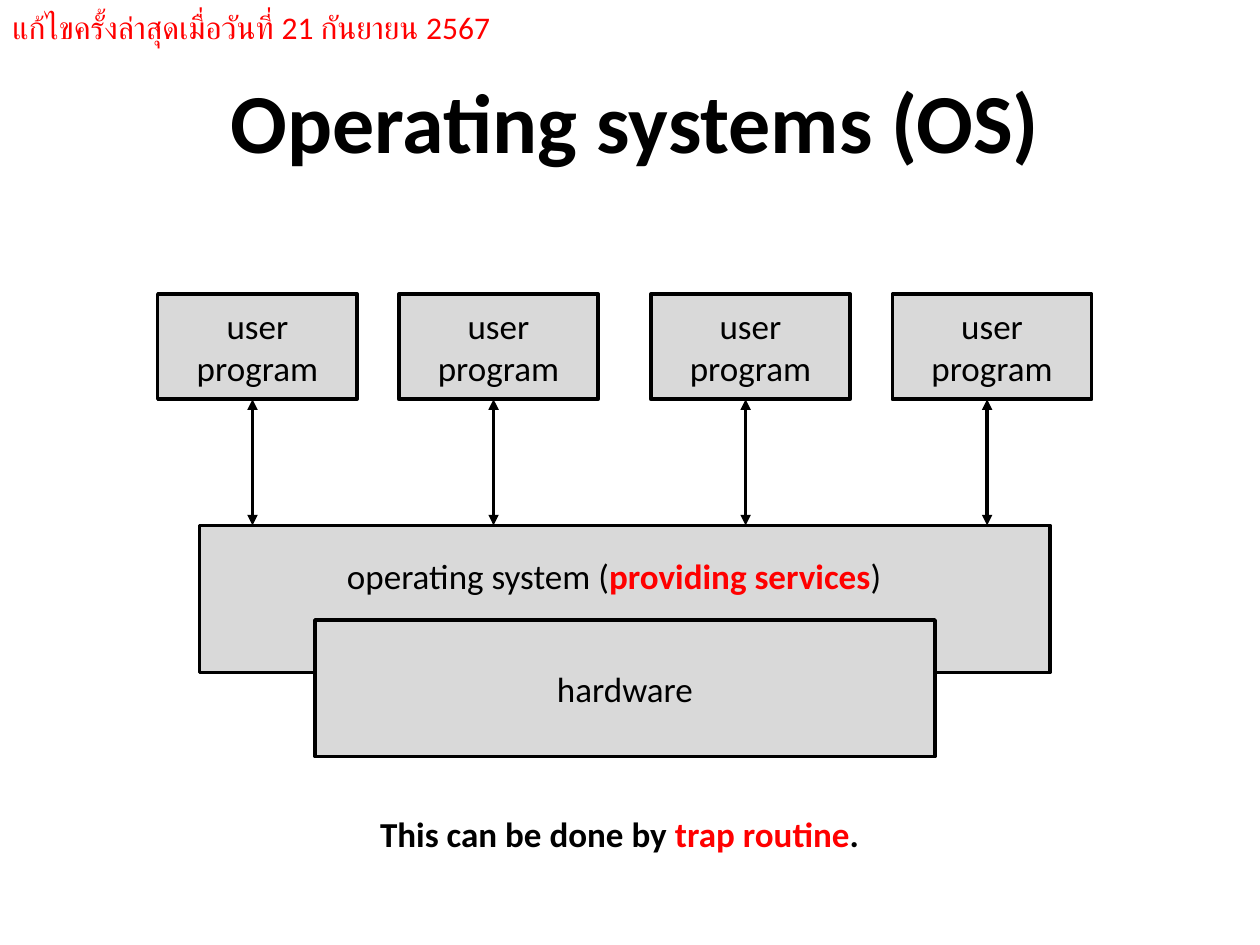
from dataclasses import dataclass

from lxml import etree
from pptx import Presentation
from pptx import util as u
from pptx.dml.color import RGBColor
from pptx.enum import shapes, text
from pptx.oxml import ns


@dataclass(frozen=True)
class Theme:
    """Colours, font and type sizes of the slide."""

    font: str = "Calibri"
    ink: RGBColor = RGBColor(0, 0, 0)
    accent: RGBColor = RGBColor(255, 0, 0)
    panel: RGBColor = RGBColor(217, 217, 217)
    title: int = 48
    body: int = 20
    note: int = 18
    line: int = 2


class Page:
    """Draws styled elements on one slide."""

    def __init__(self, deck, theme):
        self.theme = theme
        self.slide = deck.slides.add_slide(deck.slide_layouts[5])

    def style(self, span, size, color, bold=False):
        span.font.name = self.theme.font
        span.font.size = u.Pt(size)
        span.font.color.rgb = color
        span.font.bold = bold

    def title(self, words, left, top, width, height):
        box = self.slide.shapes.title
        box.left, box.top, box.width, box.height = map(u.Cm, (left, top, width, height))
        frame = box.text_frame
        frame.text = words
        frame.auto_size = text.MSO_AUTO_SIZE.NONE
        frame.vertical_anchor = text.MSO_ANCHOR.TOP
        para = frame.paragraphs[0]
        para.alignment = text.PP_ALIGN.CENTER
        self.style(para.runs[0], self.theme.title, self.theme.ink, True)

    def label(self, parts, left, top, width, height, size, align=text.PP_ALIGN.CENTER):
        box = self.slide.shapes.add_textbox(*map(u.Cm, (left, top, width, height)))
        box.text_frame.word_wrap = True
        para = box.text_frame.paragraphs[0]
        para.alignment = align
        for words, color, bold in parts:
            span = para.add_run()
            span.text = words
            self.style(span, size, color, bold)

    def panel(self, words, left, top, width, height):
        box = self.slide.shapes.add_shape(
            shapes.MSO_SHAPE.RECTANGLE, *map(u.Cm, (left, top, width, height))
        )
        box.shadow.inherit = False
        box.fill.solid()
        box.fill.fore_color.rgb = self.theme.panel
        box.line.color.rgb = self.theme.ink
        box.line.width = u.Pt(self.theme.line)
        box.text_frame.vertical_anchor = text.MSO_ANCHOR.MIDDLE
        para = box.text_frame.paragraphs[0]
        para.text = words
        para.alignment = text.PP_ALIGN.CENTER
        for span in para.runs:
            self.style(span, self.theme.body, self.theme.ink)

    def double_arrow(self, x, top, bottom):
        arrow = self.slide.shapes.add_connector(
            shapes.MSO_CONNECTOR.STRAIGHT, *map(u.Cm, (x, top, x, bottom))
        )
        arrow.line.color.rgb = self.theme.ink
        arrow.line.width = u.Pt(self.theme.line)
        outline = arrow.line._get_or_add_ln()
        for end in ("a:headEnd", "a:tailEnd"):
            etree.SubElement(outline, ns.qn(end), type="triangle")
        etree.SubElement(arrow._element.spPr, ns.qn("a:effectLst"))


def main():
    """Build and save the operating system slide."""
    theme = Theme()
    deck = Presentation()
    deck.slide_width, deck.slide_height = u.Cm(25.4), u.Cm(19.05)
    page = Page(deck, theme)
    page.title("Operating systems (OS)", 1.48, 1.27, 22.65, 2.31)

    program_top, program_height, system_top = 5.93, 2.12, 10.59
    program_bottom = program_top + program_height
    for left in (3.18, 8.04, 13.12, 17.99):
        page.panel("user\vprogram", left, program_top, 4.02, program_height)
        page.double_arrow(left + 1.91, program_bottom, system_top)

    page.panel("", 4.02, system_top, 17.15, 2.97)
    page.panel("hardware", 6.35, 12.5, 12.5, 2.75)
    page.label(
        [
            ("operating system (", theme.ink, False),
            ("providing services", theme.accent, True),
            (")", theme.ink, False),
        ],
        6.56, 11.05, 11.64, 1.11, theme.body,
    )
    page.label(
        [
            ("This can be done by ", theme.ink, True),
            ("trap routine", theme.accent, True),
            (".", theme.ink, True),
        ],
        4.66, 16.26, 15.66, 1.11, theme.body,
    )
    page.label(
        [("แก้ไขครั้งล่าสุดเมื่อวันที่ 21 กันยายน 2567", theme.accent, False)],
        0, 0.03, 25.4, 1.03, theme.note, text.PP_ALIGN.LEFT,
    )
    deck.save("out.pptx")


if __name__ == "__main__":
    main()
